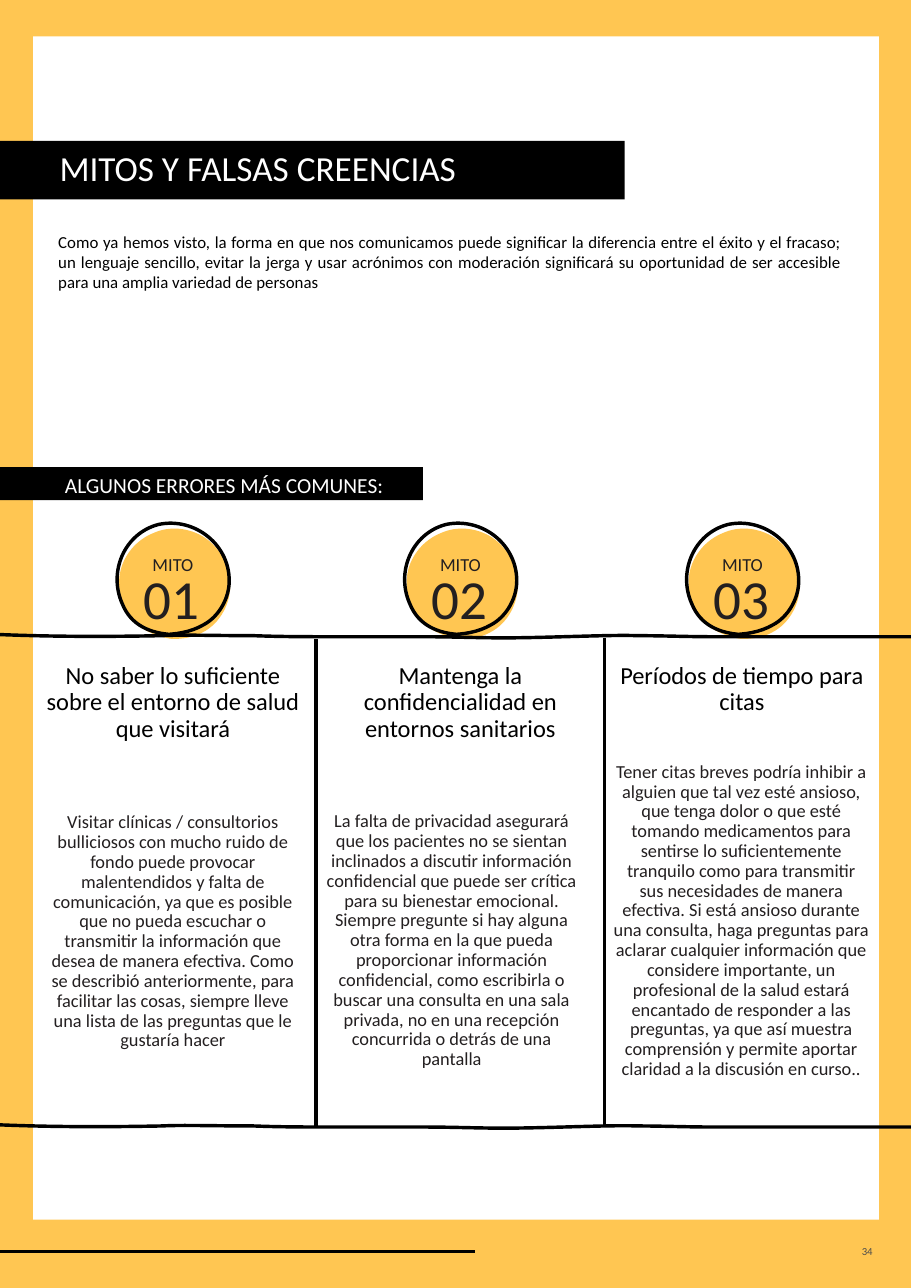
"""Build the page on myths and false beliefs."""
from lxml import etree
from pptx import Presentation
from pptx.dml.color import RGBColor
from pptx.enum.shapes import MSO_CONNECTOR, MSO_SHAPE
from pptx.enum.text import MSO_ANCHOR, PP_ALIGN
from pptx.oxml.ns import qn
from pptx.util import Inches, Pt

RECT, STRAIGHT = MSO_SHAPE.RECTANGLE, MSO_CONNECTOR.STRAIGHT
TOP, MIDDLE = MSO_ANCHOR.TOP, MSO_ANCHOR.MIDDLE
LEFT, CENTER = PP_ALIGN.LEFT, PP_ALIGN.CENTER
RIGHT, JUSTIFY = PP_ALIGN.RIGHT, PP_ALIGN.JUSTIFY
COLORS = {"yellow": "FFC652", "white": "FFFFFF", "black": "000000",
          "ink": "231F20", "gray": "4B4B4B"}
FONT = "Calibri"
WIDTH, HEIGHT = 8.27, 11.69

TITLE = "MITOS Y FALSAS CREENCIAS"
ERRORS = "ALGUNOS ERRORES MÁS COMUNES:"
INTRO = (
    "Como ya hemos visto, la forma en que nos comunicamos puede significar la "
    "diferencia entre el éxito y el fracaso; un lenguaje sencillo, evitar la jerga "
    "y usar acrónimos con moderación significará su oportunidad de ser accesible "
    "para una amplia variedad de personas")
MYTHS = [
    {"badge": 1.06, "head": "No saber lo suficiente sobre el entorno de salud que visitará",
     "head_at": (0.28, 5.97, 2.58, 0.46), "body_at": (0.28, 7.33, 2.58, 2.76),
     "body": "Visitar clínicas / consultorios bulliciosos con mucho ruido de fondo "
             "puede provocar malentendidos y falta de comunicación, ya que es posible "
             "que no pueda escuchar o transmitir la información que desea de manera "
             "efectiva. Como se describió anteriormente, para facilitar las cosas, "
             "siempre lleve una lista de las preguntas que le gustaría hacer"},
    {"badge": 3.67, "head": "Mantenga la confidencialidad en entornos sanitarios",
     "head_at": (2.88, 5.97, 2.6, 0.46), "body_at": (2.84, 7.32, 2.52, 3.04),
     "body": "La falta de privacidad asegurará que los pacientes no se sientan "
             "inclinados a discutir información confidencial que puede ser crítica "
             "para su bienestar emocional. Siempre pregunte si hay alguna otra forma "
             "en la que pueda proporcionar información confidencial, como escribirla o "
             "buscar una consulta en una sala privada, no en una recepción concurrida "
             "o detrás de una pantalla"},
    {"badge": 6.23, "head": "Períodos de tiempo para citas",
     "head_at": (5.51, 5.97, 2.45, 0.46), "body_at": (5.47, 6.87, 2.52, 3.67),
     "body": "Tener citas breves podría inhibir a alguien que tal vez esté ansioso, "
             "que tenga dolor o que esté tomando medicamentos para sentirse lo "
             "suficientemente tranquilo como para transmitir sus necesidades de manera "
             "efectiva. Si está ansioso durante una consulta, haga preguntas para "
             "aclarar cualquier información que considere importante, un profesional "
             "de la salud estará encantado de responder a las preguntas, ya que así "
             "muestra comprensión y permite aportar claridad a la discusión en curso.."},
]

DISC = [(0.17, 0.88), (0.26, 0.97), (0.38, 1.01), (0.5, 1.03),
        (0.59, 1.03), (0.69, 1.02), (0.78, 0.97),
        (0.94, 0.89), (1.04, 0.7), (1.03, 0.52),
        (1.03, 0.36), (0.93, 0.2), (0.8, 0.11),
        (0.66, 0.02), (0.48, 0), (0.33, 0.07),
        (0.18, 0.13), (0.06, 0.27), (0.03, 0.43),
        (0, 0.59), (0.05, 0.77), (0.17, 0.88)]
RING = [(0.39, 1.01), (0.53, 1.01), (0.67, 0.99), (0.79, 0.92),
        (0.92, 0.85), (1.01, 0.7), (1.02, 0.55),
        (1.04, 0.2), (0.71, -0.06), (0.38, 0.01),
        (0.07, 0.09), (-0.08, 0.44), (0.05, 0.73),
        (0.13, 0.93), (0.31, 1), (0.51, 1.01)]
WAVE = [(0, 0), (0.49, 0.02), (0.98, 0.02), (1.47, 0.01),
        (1.67, 0), (1.92, 0.01), (2.3, 0.01),
        (2.55, 0.02), (2.79, 0.02), (3.04, 0.02),
        (3.23, 0.02), (3.63, 0.02), (3.86, 0.02),
        (4.1, 0.02), (4.34, 0.03), (4.57, 0.03),
        (4.97, 0.03), (5.55, 0), (5.78, 0.01),
        (6.01, 0.01), (6.24, 0.02), (6.48, 0.02),
        (6.67, 0.02), (7.4, 0.02), (7.46, 0.02),
        (7.68, 0.02), (7.9, 0.02), (8.12, 0.02),
        (8.17, 0.02), (8.22, 0.02), (8.27, 0.02)]
WAVES = [5.76, 10.21]
RULES = [((0, 11.36), (4.31, 11.36), 1.5),
         ((2.87, 5.8), (2.87, 10.24), 2.25),
         ((5.49, 5.79), (5.49, 10.23), 2.25)]


def color(name):
    return RGBColor.from_string(COLORS[name])


def paint(shape, fill=None, line=None):
    shape.shadow.inherit = False
    if fill:
        shape.fill.solid()
        shape.fill.fore_color.rgb = color(fill)
    else:
        shape.fill.background()
    if line:
        shape.line.color.rgb = color(line)
        shape.line.width = Pt(2.25)
    else:
        shape.line.fill.background()


def write(shape, text, size, ink, align=CENTER, anchor=TOP, space=0.9, inset=0.1):
    frame = shape.text_frame
    frame.word_wrap = True
    frame.vertical_anchor = anchor
    frame.margin_left = Inches(inset)
    para = frame.paragraphs[0]
    para.text = text
    para.alignment = align
    para.line_spacing = space
    para.font.name = FONT
    para.font.size = Pt(size)
    para.font.color.rgb = color(ink)


def label(shapes, at, *args, **style):
    box = shapes.add_textbox(*map(Inches, at))
    write(box, *args, **style)
    return box


def block(shapes, at, fill):
    shape = shapes.add_shape(RECT, *map(Inches, at))
    paint(shape, fill)
    return shape


def rule(shapes, start, end, width):
    line = shapes.add_connector(STRAIGHT, *map(Inches, start + end))
    line.line.color.rgb = color("black")
    line.line.width = Pt(width)
    etree.SubElement(line._element.spPr, qn("a:effectLst"))


def draw(shapes, knots, at, close=False, **style):
    left, top, width, height = map(Inches, at)
    knots = [(Inches(x), Inches(y)) for x, y in knots]
    build = shapes.build_freeform(*knots[0])
    build.add_line_segments(knots[3::3], close=close)
    shape = build.convert_to_shape()
    shape.left, shape.top, shape.width, shape.height = left, top, width, height
    route = shape._element.find(".//" + qn("a:path"))
    route.set("w", str(width))
    route.set("h", str(height))
    start = route.find(qn("a:moveTo"))[0]
    start.set("x", str(knots[0][0]))
    start.set("y", str(knots[0][1]))
    for i, leg in enumerate(route.findall(qn("a:lnTo"))):
        curve = etree.Element(qn("a:cubicBezTo"))
        for x, y in knots[3 * i + 1:3 * i + 4]:
            etree.SubElement(curve, qn("a:pt"), x=str(x), y=str(y))
        route.replace(leg, curve)
    paint(shape, **style)
    return shape


def badge(shapes, left, number):
    shapes.add_group_shape([
        draw(shapes, DISC, (left, 4.77, 1.04, 1.03), close=True, fill="yellow"),
        label(shapes, (left - 0.02, 5.12, 1.04, 0.68), f"{number:02}", 36, "ink",
              anchor=MIDDLE),
        label(shapes, (left, 5.01, 1.02, 0.24), "MITO", 12, "ink", anchor=MIDDLE),
        draw(shapes, RING, (left, 4.75, 1.02, 1.01), line="black")])


def main():
    deck = Presentation()
    deck.slide_width, deck.slide_height = Inches(WIDTH), Inches(HEIGHT)
    shapes = deck.slides.add_slide(deck.slide_layouts[6]).shapes
    block(shapes, (0, -0.02, WIDTH, 11.71), "yellow")
    block(shapes, (0.3, 0.33, 7.68, 10.74), "white")
    for start, end, width in RULES:
        rule(shapes, start, end, width)
    label(shapes, (6.94, 11.28, 1.08, 0.16), "34", 7, "gray",
          align=RIGHT, anchor=MIDDLE, space=1)
    for number, myth in enumerate(MYTHS, 1):
        label(shapes, myth["body_at"], myth["body"], 12, "ink")
        label(shapes, myth["head_at"], myth["head"], 16, "black")
        badge(shapes, myth["badge"], number)
    for top in WAVES:
        draw(shapes, WAVE, (0, top, WIDTH, 0.03), line="black")
    label(shapes, (0.43, 2.05, 7.31, 0.87), INTRO, 11, "black", align=JUSTIFY, space=1)
    write(block(shapes, (-0.05, 1.28, 5.72, 0.53), "black"), TITLE, 23, "white",
          align=LEFT, anchor=MIDDLE, inset=0.59)
    write(block(shapes, (0, 4.24, 3.84, 0.3), "black"), ERRORS, 14, "white",
          align=LEFT, space=1, inset=0.59)
    deck.save("out.pptx")


if __name__ == "__main__":
    main()
